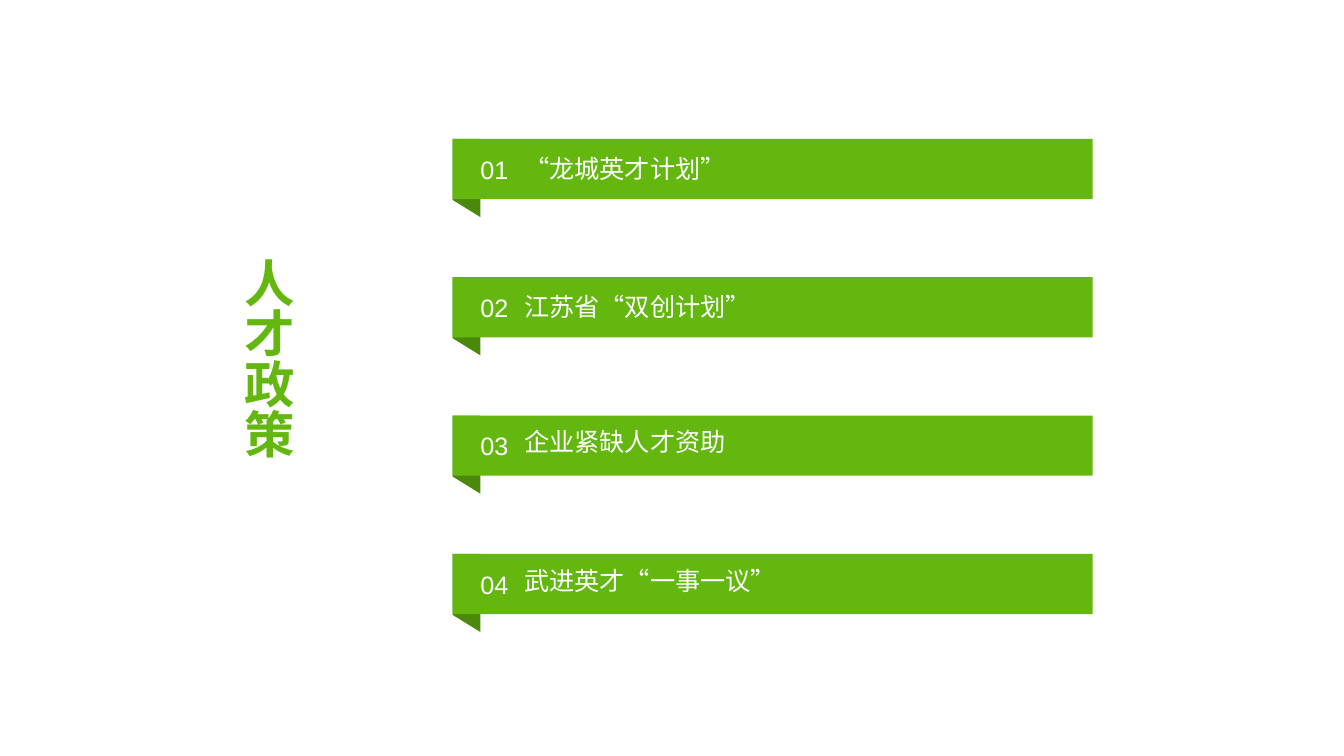
import pptx
import pptx.util
import pptx.dml.color
import pptx.enum.shapes
import pptx.enum.text
import pptx.oxml.ns
import lxml.etree

Pt = pptx.util.Pt
RGBColor = pptx.dml.color.RGBColor
ANCHOR = pptx.enum.text.MSO_ANCHOR

TITLE = "人才政策"
POLICIES = [
    ("“龙城英才计划”", 1.2),
    ("江苏省“双创计划”", 1.2),
    ("企业紧缺人才资助", 1),
    ("武进英才“一事一议”", 1),
]

GREEN = RGBColor(0x63, 0xB7, 0x0F)
DARK_GREEN = RGBColor(0x4A, 0x89, 0x0B)
WHITE = RGBColor(0xFF, 0xFF, 0xFF)
LATIN = "Arial"
CJK = "Noto Sans CJK SC"

BAR_LEFT, BAR_TOP, BAR_W, BAR_H = 323.3, 99.2, 457.2, 43
PITCH = 98.8
FOLD_W, FOLD_H, FOLD_SIDE = 19.8, 55.8, 43.6
NUM_W, NUM_H, NUM_DROP = 37.4, 31, 6.2


def write(tf, text, size, color, latin, spacing, insets, anchor, bold=False):
    tf.text = text
    tf.vertical_anchor = anchor
    tf.margin_left, tf.margin_top, tf.margin_right, tf.margin_bottom = map(Pt, insets)
    p = tf.paragraphs[0]
    p.alignment = pptx.enum.text.PP_ALIGN.LEFT
    p.line_spacing = spacing
    font = p.runs[0].font
    font.size, font.bold, font.name = Pt(size), bold, latin
    font.color.rgb = color
    font.language_id = pptx.enum.lang.MSO_LANGUAGE_ID.SIMPLIFIED_CHINESE
    ea = lxml.etree.SubElement(p.runs[0].font._element, pptx.oxml.ns.qn("a:ea"))
    ea.set("typeface", CJK)


def paint(shape, color):
    shape.shadow.inherit = False
    shape.fill.solid()
    shape.fill.fore_color.rgb = color
    shape.line.fill.background()


def add_policy(s, i, label, spacing):
    top = BAR_TOP + i * PITCH
    right = BAR_LEFT + FOLD_W
    shapes = s.shapes.add_group_shape().shapes

    fb = shapes.build_freeform(Pt(BAR_LEFT), Pt(top))
    corners = [(right, top), (right, top + FOLD_H), (BAR_LEFT, top + FOLD_SIDE)]
    fb.add_line_segments([(Pt(x), Pt(y)) for x, y in corners], close=True)
    paint(fb.convert_to_shape(), DARK_GREEN)

    bar = shapes.add_shape(pptx.enum.shapes.MSO_SHAPE.RECTANGLE,
                           Pt(BAR_LEFT), Pt(top), Pt(BAR_W), Pt(BAR_H))
    paint(bar, GREEN)
    write(bar.text_frame, label, 18, WHITE, LATIN, spacing,
          (51.1, 2.9, 2.9, 8.6), ANCHOR.MIDDLE)

    num = shapes.add_textbox(Pt(right), Pt(top + NUM_DROP), Pt(NUM_W), Pt(NUM_H))
    num.text_frame.word_wrap = True
    write(num.text_frame, f"{i + 1:02d}", 18, WHITE, LATIN, 1,
          (0, 3.6, 0, 3.6), ANCHOR.MIDDLE)


def main():
    prs = pptx.Presentation()
    prs.slide_width, prs.slide_height = Pt(960), Pt(540)
    s = prs.slides.add_slide(prs.slide_layouts[5])

    title = s.shapes.title
    title.left, title.top, title.width, title.height = map(Pt, (162, 180.7, 71.3, 159.1))
    tf = title.text_frame
    tf.auto_size = pptx.enum.text.MSO_AUTO_SIZE.NONE
    tf.word_wrap = True
    write(tf, TITLE, 36, GREEN, CJK, 1.3, (7.2, 3.6, 7.2, 3.6), ANCHOR.TOP, bold=True)
    tf._txBody.bodyPr.set("vert", "eaVert")

    for i, (label, spacing) in enumerate(POLICIES):
        add_policy(s, i, label, spacing)
    prs.save("out.pptx")


if __name__ == "__main__":
    import pptx.enum.lang
    main()
